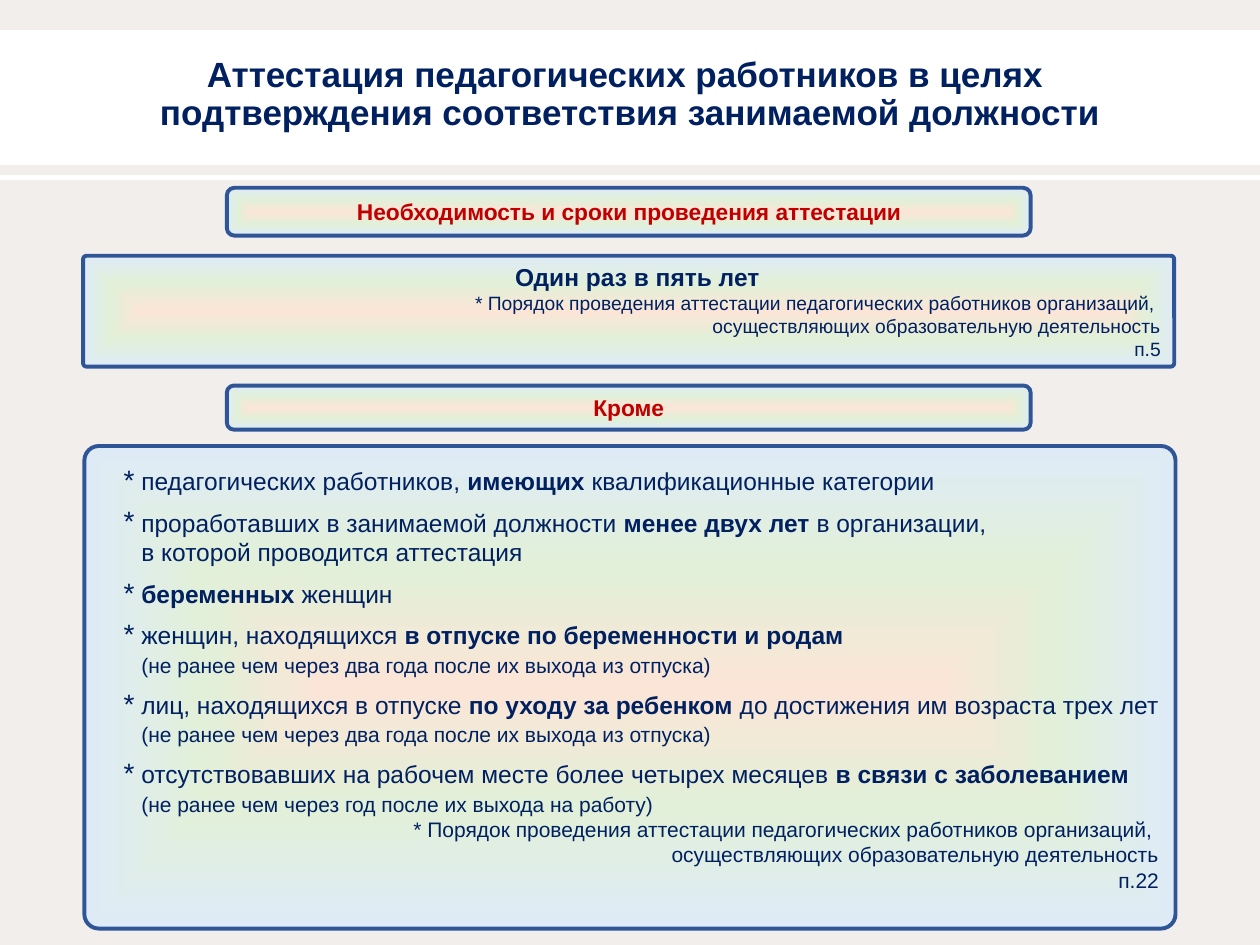
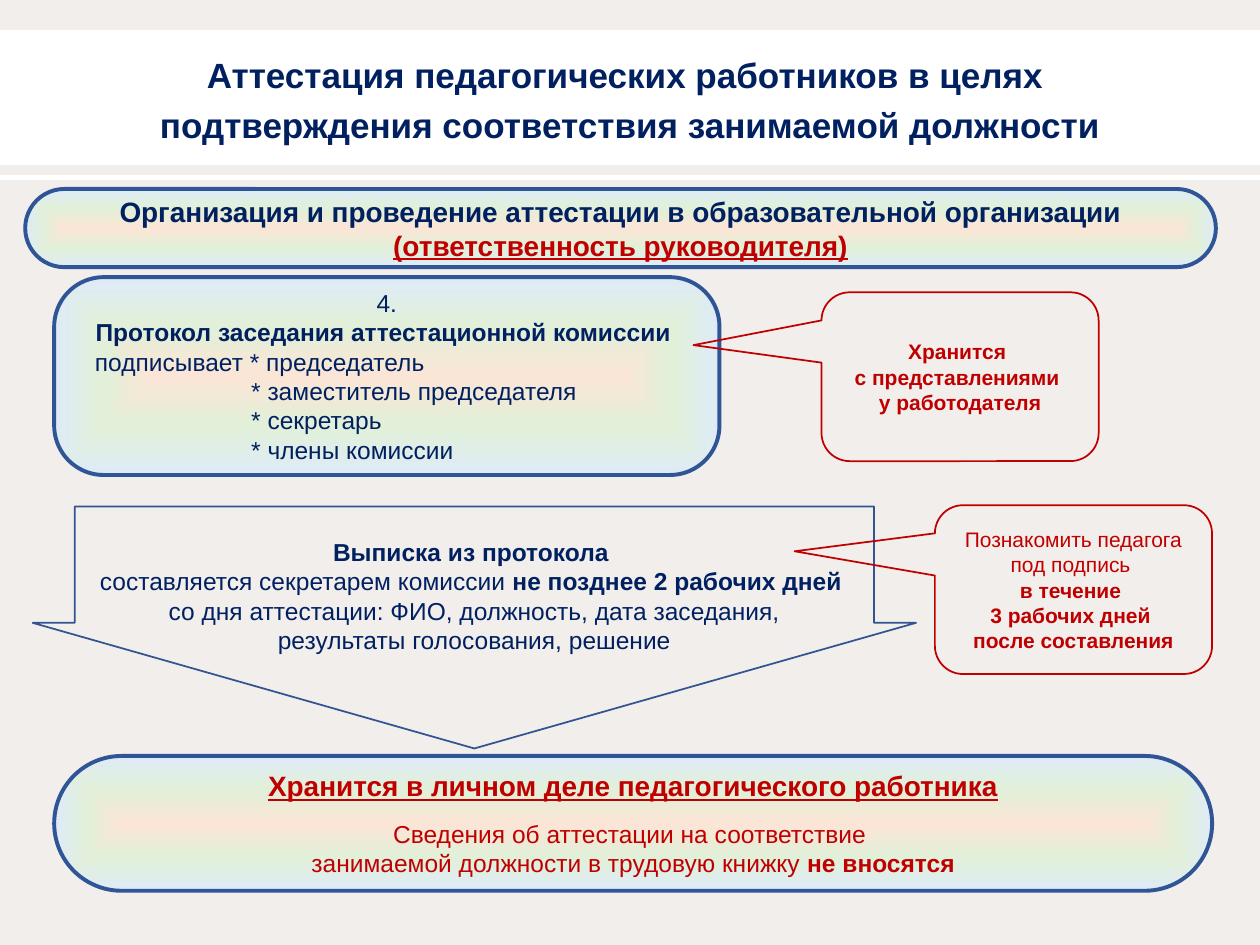
import pptx
import pptx.dml.color
import pptx.enum.shapes
import pptx.enum.text
import pptx.oxml
import pptx.oxml.ns
import pptx.util
from dataclasses import dataclass

Inches = pptx.util.Inches
Pt = pptx.util.Pt
RGBColor = pptx.dml.color.RGBColor
Shape = pptx.enum.shapes.MSO_SHAPE
Align = pptx.enum.text.PP_ALIGN
Anchor = pptx.enum.text.MSO_ANCHOR

BACKGROUND = RGBColor(0xF1, 0xEE, 0xEB)
WHITE = RGBColor(0xFF, 0xFF, 0xFF)
NAVY = RGBColor(0x00, 0x20, 0x60)
RED = RGBColor(0xC0, 0x00, 0x00)
PANEL_LINE = RGBColor(0x2F, 0x55, 0x97)
ARROW_LINE = RGBColor(0x32, 0x54, 0x91)
GRADIENT = [
    (0, RGBColor(0xFB, 0xE5, 0xD6)),
    (50, RGBColor(0xE2, 0xF0, 0xD9)),
    (100, RGBColor(0xDE, 0xEB, 0xF7)),
]
FONT = "Arial"
TITLE = ("Аттестация педагогических работников в целях \v"
         "подтверждения соответствия занимаемой должности")
REGULATION = [
    "* Порядок проведения аттестации педагогических работников организаций, ",
    "осуществляющих образовательную деятельность",
]
ITEM_INDENT = 0.32
ITEM_HANGING = 0.14


@dataclass
class Line:
    """One paragraph; parts of the text between ** marks are bold."""
    text: str
    size: float = 14
    color: RGBColor = NAVY
    align: Align = Align.CENTER
    underline: bool = False
    before: float = 0
    indent: float = 0
    bullet: bool = False


def item(text, before=7):
    return Line(text, align=Align.LEFT, before=before, indent=ITEM_INDENT, bullet=True)


def item_detail(text, size=12, before=1.5):
    return Line(text, size, align=Align.LEFT, before=before, indent=ITEM_INDENT)


def regulation(point, size):
    """Right-aligned reference to a point of the regulation."""
    return [Line(text, size, align=Align.RIGHT) for text in REGULATION + [point]]


def set_indent(paragraph, line):
    properties = paragraph._p.get_or_add_pPr()
    properties.set("marL", str(Inches(line.indent)))
    if line.bullet:
        properties.set("indent", str(-Inches(ITEM_HANGING)))
        namespace = pptx.oxml.ns.nsdecls("a")
        for tag in ('buSzPct {} val="114000"', 'buFont {} typeface="Arial"',
                    'buChar {} char="*"'):
            element = pptx.oxml.parse_xml(f"<a:{tag.format(namespace)}/>")
            properties.insert_element_before(element, "a:tabLst", "a:defRPr", "a:extLst")


def write_line(paragraph, line):
    paragraph.alignment = line.align
    paragraph.space_before = Pt(line.before)
    paragraph.font.name = FONT
    paragraph.font.size = Pt(line.size)
    paragraph.font.color.rgb = line.color
    paragraph.font.underline = line.underline
    if line.indent:
        set_indent(paragraph, line)
    for position, part in enumerate(line.text.split("**")):
        if part:
            run = paragraph.add_run()
            run.text = part
            run.font.bold = position % 2 == 1


def write_lines(shape, lines, wrap=True, anchor=Anchor.MIDDLE, top=0.05, bottom=0.05):
    frame = shape.text_frame
    frame.word_wrap = wrap
    frame.vertical_anchor = anchor
    frame.margin_top = Inches(top)
    frame.margin_bottom = Inches(bottom)
    for position, line in enumerate(lines):
        paragraph = frame.add_paragraph() if position else frame.paragraphs[0]
        write_line(paragraph, line)


def add_shape(slide, kind, box, adjustments=()):
    shape = slide.shapes.add_shape(kind, *map(Inches, box))
    shape.shadow.inherit = False
    for position, value in enumerate(adjustments):
        shape.adjustments[position] = value
    return shape


def fill_from_centre(shape):
    stops = "".join(
        f'<a:gs pos="{percent * 1000}"><a:srgbClr val="{color}"/></a:gs>'
        for percent, color in GRADIENT)
    gradient = pptx.oxml.parse_xml(
        f'<a:gradFill {pptx.oxml.ns.nsdecls("a")} rotWithShape="1">'
        f'<a:gsLst>{stops}</a:gsLst><a:path path="shape">'
        '<a:fillToRect l="50000" t="50000" r="50000" b="50000"/></a:path></a:gradFill>')
    shape._element.spPr.find(pptx.oxml.ns.qn("a:prstGeom")).addnext(gradient)


def add_panel(slide, box, rounding, lines, **margins):
    panel = add_shape(slide, Shape.ROUNDED_RECTANGLE, box, [rounding])
    fill_from_centre(panel)
    panel.line.color.rgb = PANEL_LINE
    panel.line.width = Pt(2.25)
    write_lines(panel, lines, wrap=False, **margins)


def add_outline(slide, kind, box, adjustments, color, lines, **layout):
    outline = add_shape(slide, kind, box, adjustments)
    outline.fill.background()
    outline.line.color.rgb = color
    outline.line.width = Pt(1)
    write_lines(outline, lines, **layout)


def add_callout(slide, left, top, tip, lines):
    add_outline(slide, Shape.ROUNDED_RECTANGULAR_CALLOUT, (left, top, 2.2, 1.34),
                (*tip, 0.167), RED, [Line(text, 12, RED) for text in lines])


def add_band(slide, box):
    band = add_shape(slide, Shape.RECTANGLE, box)
    band.fill.solid()
    band.fill.fore_color.rgb = WHITE
    band.line.fill.background()


def add_titled_slide(presentation, line_spacing):
    slide = presentation.slides.add_slide(presentation.slide_layouts[5])
    slide.background.fill.solid()
    slide.background.fill.fore_color.rgb = BACKGROUND
    add_band(slide, (0, 0.24, 10, 1.07))
    add_band(slide, (0, 1.39, 10, 0.04))

    title = slide.shapes.title
    title.left, title.top, title.width, title.height = map(Inches, (0, 0.24, 10, 1.03))
    title.text_frame.text = TITLE
    title.text_frame.auto_size = pptx.enum.text.MSO_AUTO_SIZE.NONE
    title.text_frame.vertical_anchor = Anchor.MIDDLE
    paragraph = title.text_frame.paragraphs[0]
    paragraph.alignment = Align.CENTER
    paragraph.line_spacing = line_spacing
    paragraph.font.name = FONT
    paragraph.font.size = Pt(20)
    paragraph.font.bold = True
    paragraph.font.color.rgb = NAVY
    slide.shapes._spTree.append(title._element)  # in front of the bands
    return slide


def add_terms_slide(presentation):
    slide = add_titled_slide(presentation, 0.9)
    add_panel(slide, (0.67, 3.54, 8.66, 3.83), 0.03, [
        item("педагогических работников, **имеющих **квалификационные категории", before=0),
        item("проработавших в занимаемой должности **менее двух лет** в организации,"),
        item_detail("в которой проводится аттестация", size=14, before=0),
        item("**беременных **женщин"),
        item("женщин, находящихся **в отпуске по беременности и родам**"),
        item_detail("(не ранее чем через два года после их выхода из отпуска)"),
        item("лиц, находящихся в отпуске **по уходу за ребенком **"
             "до достижения им возраста трех лет"),
        item_detail("(не ранее чем через два года после их выхода из отпуска)"),
        item("отсутствовавших на рабочем месте более четырех месяцев "
             "**в связи с заболеванием**"),
        item_detail("(не ранее чем через год после их выхода на работу)"),
        *regulation("п.22", 12),
    ], top=0.12, bottom=0.25)
    add_panel(slide, (0.66, 2.03, 8.66, 0.88), 0.03,
              [Line("**Один раз в пять лет**", indent=0.14), *regulation("п.5", 11)])
    for top, height, heading in [
        (1.49, 0.38, "Необходимость и сроки проведения аттестации"),
        (3.06, 0.35, "Кроме"),
    ]:
        add_panel(slide, (1.8, top, 6.38, height), 0.16, [Line(f"**{heading}**", 13, RED)])


def add_protocol_slide(presentation):
    slide = add_titled_slide(presentation, 1.2)
    add_panel(slide, (0.2, 1.5, 9.45, 0.62), 0.5, [
        Line("**Организация и проведение аттестации в образовательной организации**", 16),
        Line("**(ответственность руководителя)**", 16, RED, underline=True),
    ])
    signers = ["заместитель председателя", "секретарь", "члены комиссии"]
    add_panel(slide, (0.43, 2.2, 5.28, 1.57), 0.25, [
        Line("4."),
        Line("**Протокол заседания аттестационной комиссии **"),
        Line("подписывает * председатель", align=Align.LEFT, indent=0.11),
        *[Line(f"* {signer}", align=Align.LEFT, indent=1.35) for signer in signers],
    ])
    add_outline(slide, Shape.DOWN_ARROW, (0.26, 4.02, 7.01, 1.92), (0.905, 0.519), ARROW_LINE, [
        Line("**Выписка из протокола **"),
        Line("составляется секретарем комиссии **не позднее 2 рабочих дней **"),
        Line("со дня аттестации: ФИО, должность, дата заседания,"),
        Line("результаты голосования, решение"),
    ], anchor=Anchor.TOP, top=0.24, bottom=0)
    add_panel(slide, (0.43, 6, 9.19, 1.07), 0.5, [
        Line("**Хранится в личном деле педагогического работника**", 16, RED, underline=True),
        Line("Сведения об аттестации на соответствие ", color=RED, before=9.5),
        Line("занимаемой должности в трудовую книжку **не вносятся**", color=RED),
    ])
    add_callout(slide, 6.52, 2.32, (-0.962, -0.187),
                ["**Хранится **", "**с представлениями **", "**у работодателя**"])
    add_callout(slide, 7.42, 4.01, (-1.006, -0.227),
                ["Познакомить педагога под подпись ", "**в течение **",
                 "**3 рабочих дней **", "**после составления**"])


def main():
    presentation = pptx.Presentation()
    presentation.slide_width = Inches(10)
    presentation.slide_height = Inches(7.5)
    add_terms_slide(presentation)
    add_protocol_slide(presentation)
    presentation.save("out.pptx")


if __name__ == "__main__":
    main()
